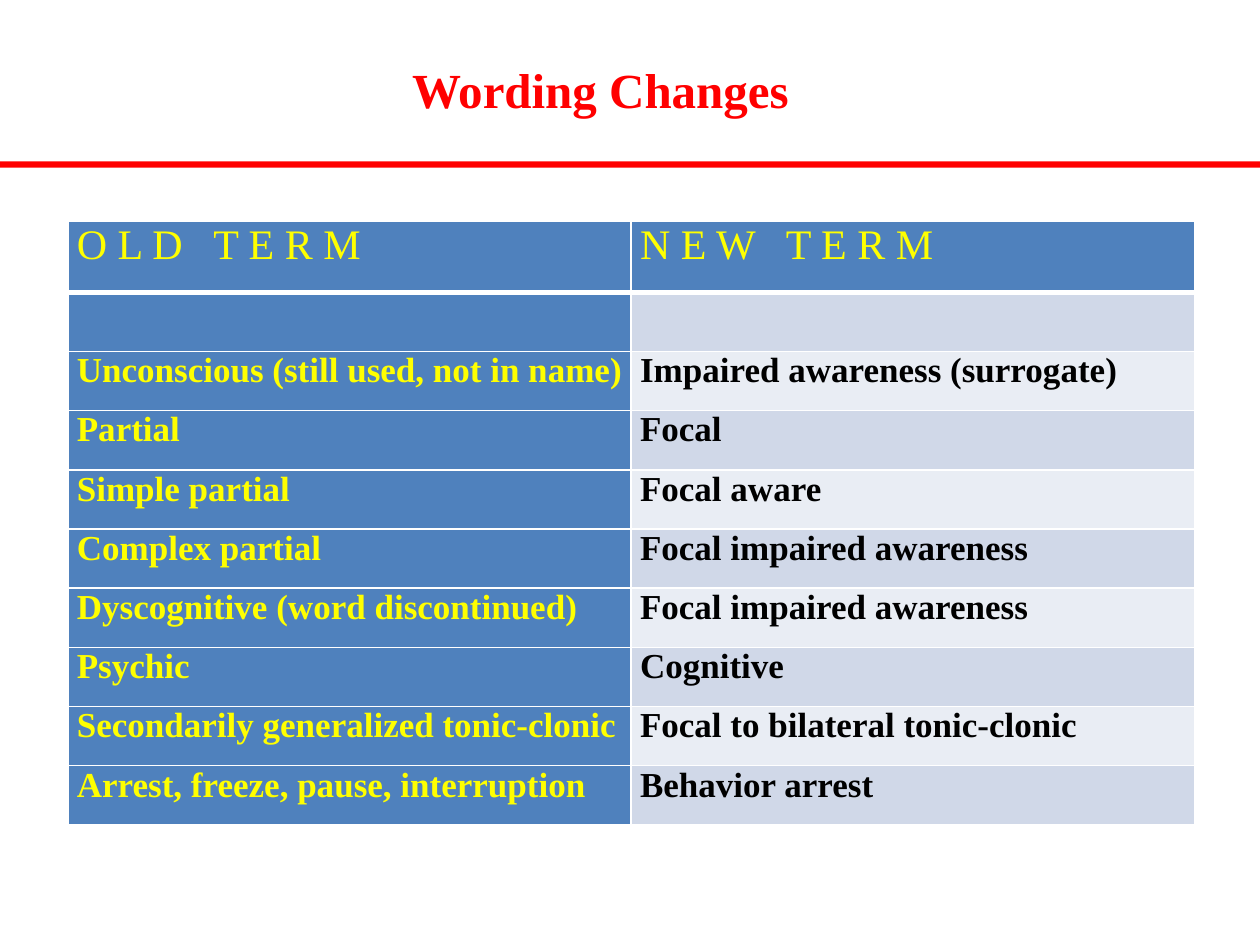
from typing import NamedTuple

from pptx import Presentation
from pptx.dml.color import RGBColor
from pptx.enum.shapes import MSO_SHAPE
from pptx.enum.text import MSO_ANCHOR, MSO_AUTO_SIZE, PP_ALIGN
from pptx.oxml.ns import qn
from pptx.util import Inches, Pt
from lxml.etree import SubElement

RED = RGBColor(0xFF, 0x00, 0x00)
YELLOW = RGBColor(0xFF, 0xFF, 0x00)
BLACK = RGBColor(0x00, 0x00, 0x00)
WHITE = RGBColor(0xFF, 0xFF, 0xFF)
BLUE = RGBColor(0x4F, 0x81, 0xBD)
BANDS = (RGBColor(0xE9, 0xED, 0xF4), RGBColor(0xD0, 0xD8, 0xE8))

FONT = "Times New Roman"
COLUMN_WIDTH = 4.47
HEADER_HEIGHT, ROW_HEIGHT = 0.56, 0.47


class TermChange(NamedTuple):
    old: str
    new: str


CHANGES = [
    TermChange("O L D   T E R M", "N E W   T E R M"),
    TermChange("", ""),
    TermChange("Unconscious (still used, not in name)", "Impaired awareness (surrogate)"),
    TermChange("Partial", "Focal"),
    TermChange("Simple partial", "Focal aware"),
    TermChange("Complex partial", "Focal impaired awareness"),
    TermChange("Dyscognitive (word discontinued)", "Focal impaired awareness"),
    TermChange("Psychic", "Cognitive"),
    TermChange("Secondarily generalized tonic-clonic", "Focal to bilateral tonic-clonic"),
    TermChange("Arrest, freeze, pause, interruption", "Behavior arrest"),
]


def style_font(font, size: int, color: RGBColor, bold: bool) -> None:
    for name, value in {"name": FONT, "size": Pt(size), "bold": bold}.items():
        setattr(font, name, value)
    font.color.rgb = color


def add_borders(cell, bottom_width: int) -> None:
    widths = {"a:lnL": 1, "a:lnR": 1, "a:lnT": 1, "a:lnB": bottom_width}
    properties = cell._tc.get_or_add_tcPr()
    for side, width in widths.items():
        line = SubElement(properties, qn(side), w=str(Pt(width)))
        fill = SubElement(line, qn("a:solidFill"))
        SubElement(fill, qn("a:srgbClr"), val=str(WHITE))


def fill_cell(cell, term: str, row: int, column: int) -> None:
    is_header = row == 0
    on_blue = is_header or column == 0
    add_borders(cell, 3 if is_header else 1)
    cell.fill.solid()
    cell.fill.fore_color.rgb = BLUE if on_blue else BANDS[row % 2]
    margins = {"margin_left": 0.07, "margin_right": 0.07,
               "margin_top": 0, "margin_bottom": 0}
    for name, inches in margins.items():
        setattr(cell, name, Inches(inches))
    if term:
        cell.text = term
        style_font(cell.text_frame.paragraphs[0].runs[0].font,
                   24 if is_header else 20,
                   YELLOW if on_blue else BLACK, not is_header)


def add_term_table(slide, changes: list[TermChange]) -> None:
    height = HEADER_HEIGHT + ROW_HEIGHT * (len(changes) - 1)
    terms = slide.shapes.add_table(
        len(changes), 2, Inches(0.54), Inches(1.76),
        Inches(2 * COLUMN_WIDTH), Inches(height)).table
    for column in terms.columns:
        column.width = Inches(COLUMN_WIDTH)
    for row, change in enumerate(changes):
        terms.rows[row].height = Inches(ROW_HEIGHT if row else HEADER_HEIGHT)
        for column, term in enumerate(change):
            fill_cell(terms.cell(row, column), term, row, column)


def format_title(title, text: str) -> None:
    box = {"left": 3.17, "top": 0.42, "width": 3.23, "height": 0.57}
    for name, inches in box.items():
        setattr(title, name, Inches(inches))
    frame = title.text_frame
    frame.text = text
    layout = {"word_wrap": False, "auto_size": MSO_AUTO_SIZE.SHAPE_TO_FIT_TEXT,
              "vertical_anchor": MSO_ANCHOR.TOP}
    for name, value in layout.items():
        setattr(frame, name, value)
    heading = frame.paragraphs[0]
    heading.alignment = PP_ALIGN.LEFT
    style_font(heading.runs[0].font, 28, RED, True)


def main() -> None:
    deck = Presentation()
    deck.slide_width, deck.slide_height = Inches(10), Inches(7.5)
    slide = deck.slides.add_slide(deck.slide_layouts[5])

    # Title and the red rule under it
    format_title(slide.shapes.title, "Wording Changes")
    rule = slide.shapes.add_shape(
        MSO_SHAPE.RECTANGLE, 0, Inches(1.28), deck.slide_width, Inches(0.05))
    rule.shadow.inherit = False
    rule.fill.solid()
    rule.fill.fore_color.rgb = RED
    rule.line.fill.background()

    # Old and new terms
    add_term_table(slide, CHANGES)

    deck.save("out.pptx")


if __name__ == "__main__":
    main()
